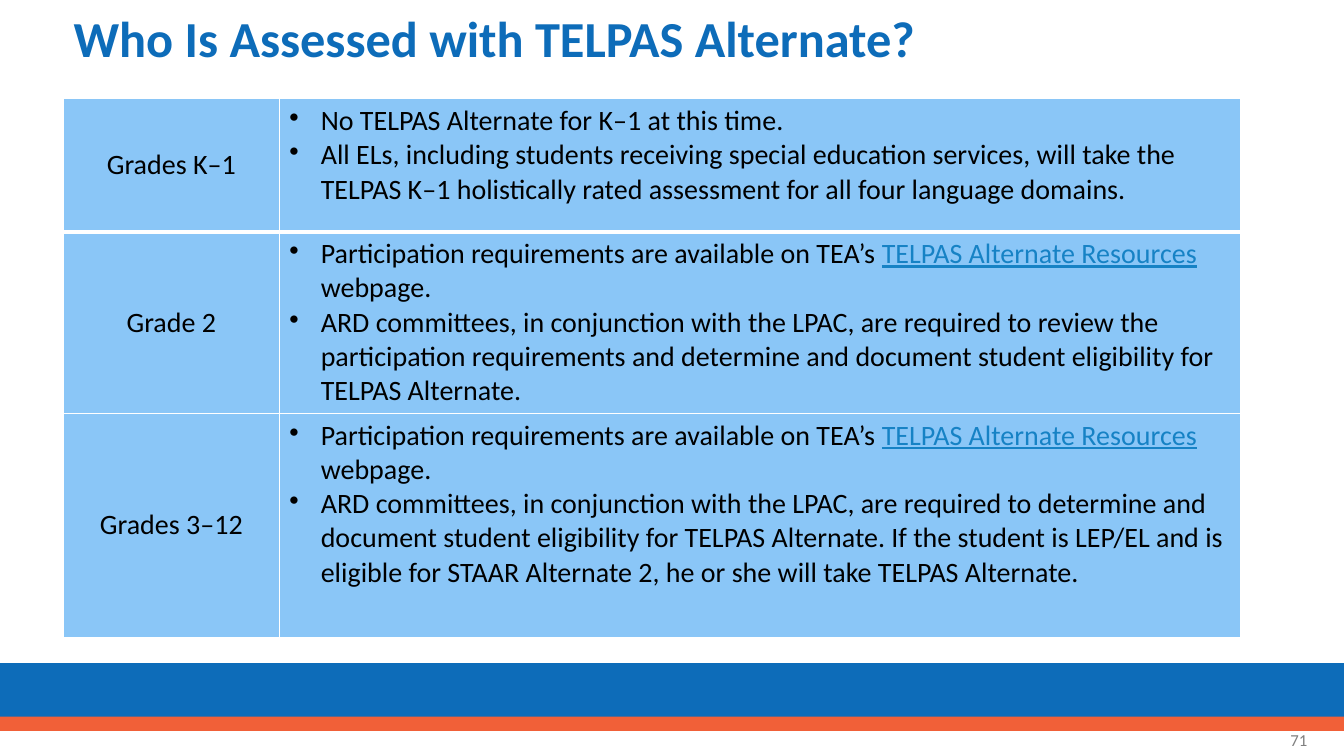
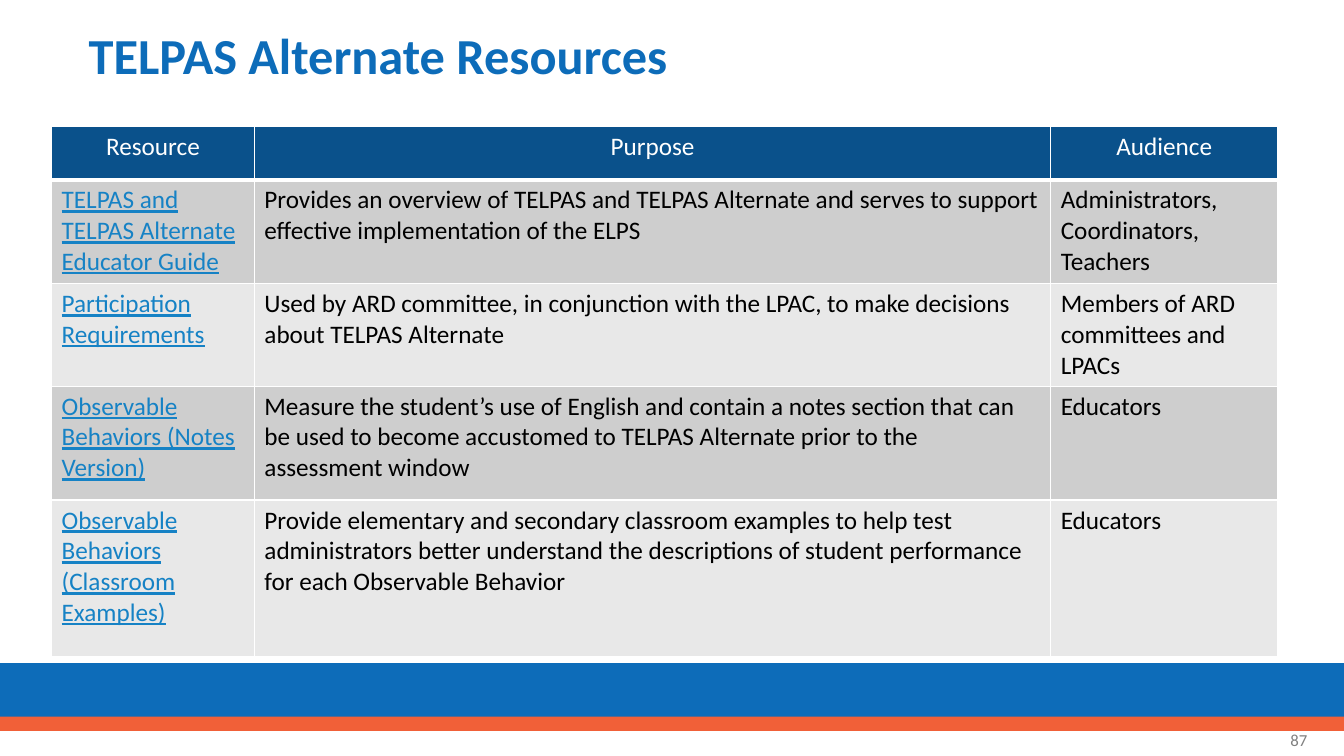
from dataclasses import dataclass

import pptx
import pptx.dml.color
import pptx.enum.shapes
import pptx.enum.text
import pptx.oxml.ns
import pptx.oxml.xmlchemy
import pptx.presentation
import pptx.slide
import pptx.table
import pptx.text.text
import pptx.util
from lxml import etree

Cm = pptx.util.Cm
PP_ALIGN = pptx.enum.text.PP_ALIGN
MSO_ANCHOR = pptx.enum.text.MSO_ANCHOR


# Theme and content types
@dataclass(frozen=True)
class Theme:
    font: str = "Calibri"
    blue: str = "0D6CB9"
    orange: str = "F16038"
    header: str = "0A518B"
    sky: str = "8AC6F7"
    dark_band: str = "CECECE"
    light_band: str = "E8E8E8"
    link: str = "1682C5"
    text: str = "000000"
    white: str = "FFFFFF"
    number: str = "808080"
    title_size: int = 36
    grades_size: int = 20
    resources_size: int = 18
    number_size: int = 12
    thin_line: int = 1
    thick_line: int = 3


THEME = Theme()


@dataclass(frozen=True)
class Band:
    top: float
    height: float
    color: str


@dataclass(frozen=True)
class Run:
    text: str
    link: bool = False


Paragraph = tuple[Run, ...]


@dataclass(frozen=True)
class CellStyle:
    size: int
    fill: str
    color: str = THEME.text
    alignment: PP_ALIGN = PP_ALIGN.LEFT
    anchor: MSO_ANCHOR = MSO_ANCHOR.TOP
    bulleted: bool = False
    bottom_line: int = THEME.thin_line


@dataclass(frozen=True)
class TableLayout:
    left: float
    top: float
    columns: tuple[float, ...]
    rows: tuple[float, ...]


@dataclass(frozen=True)
class Grade:
    name: str
    rules: tuple[Paragraph, ...]


@dataclass(frozen=True)
class Resource:
    name: str
    purpose: str
    audience: str


BANDS = (Band(16.71, 1.47, THEME.blue), Band(18.06, 0.36, THEME.orange))

WEBPAGE_RULE: Paragraph = (
    Run("Participation requirements are available on TEA’s "),
    Run("TELPAS Alternate Resources ", link=True),
    Run("webpage."),
)

GRADES = (
    Grade("Grades K–1", (
        (Run("No TELPAS Alternate for K–1 at this time."),),
        (Run("All ELs, including students receiving special education services, will take "
             "the TELPAS K–1 holistically rated assessment for all four language domains."),),
    )),
    Grade("Grade 2", (
        WEBPAGE_RULE,
        (Run("ARD committees, in conjunction with the LPAC, are required to review the "
             "participation requirements and determine and document student eligibility "
             "for TELPAS Alternate."),),
    )),
    Grade("Grades 3–12", (
        WEBPAGE_RULE,
        (Run("ARD committees, in conjunction with the LPAC, are required to determine and "
             "document student eligibility for TELPAS Alternate. If the student is LEP/EL "
             "and is eligible for STAAR Alternate 2, he or she will take TELPAS Alternate."),),
    )),
)

RESOURCES = (
    Resource("TELPAS and TELPAS Alternate Educator Guide",
             "Provides an overview of TELPAS and TELPAS Alternate and serves to support "
             "effective implementation of the ELPS",
             "Administrators, Coordinators, Teachers"),
    Resource("Participation Requirements",
             "Used by ARD committee, in conjunction with the LPAC, to make decisions "
             "about TELPAS Alternate",
             "Members of ARD committees and LPACs"),
    Resource("Observable Behaviors (Notes Version)",
             "Measure the student’s use of English and contain a notes section that can be "
             "used to become accustomed to TELPAS Alternate prior to the assessment window",
             "Educators"),
    Resource("Observable Behaviors (Classroom Examples)",
             "Provide elementary and secondary classroom examples to help test "
             "administrators better understand the descriptions of student performance "
             "for each Observable Behavior",
             "Educators"),
)


# Formatting helpers
def rgb(color: str) -> pptx.dml.color.RGBColor:
    return pptx.dml.color.RGBColor.from_string(color)


def format_font(paragraph: pptx.text.text._Paragraph, size: int, color: str,
                bold: bool = False) -> None:
    font = paragraph.font
    font.name, font.size, font.bold = THEME.font, pptx.util.Pt(size), bold
    font.color.rgb = rgb(color)


def add_bullet(paragraph: pptx.text.text._Paragraph) -> None:
    properties = paragraph._p.get_or_add_pPr()
    indent = Cm(0.79)
    properties.set("marL", str(indent))
    properties.set("indent", str(-indent))
    etree.SubElement(properties, pptx.oxml.ns.qn("a:buChar")).set("char", "•")


def add_borders(cell: pptx.table._Cell, bottom_line: int) -> None:
    properties = cell._tc.get_or_add_tcPr()
    widths = {"lnL": THEME.thin_line, "lnR": THEME.thin_line,
              "lnT": THEME.thin_line, "lnB": bottom_line}
    for position, (side, width) in enumerate(widths.items()):
        line = etree.Element(pptx.oxml.ns.qn(f"a:{side}"), w=str(pptx.util.Pt(width)))
        fill = etree.SubElement(line, pptx.oxml.ns.qn("a:solidFill"))
        etree.SubElement(fill, pptx.oxml.ns.qn("a:srgbClr"), val=THEME.white)
        properties.insert(position, line)


# Shared slide parts
def add_bands(slide: pptx.slide.Slide) -> None:
    """Draw the footer bands and move them to the layout the slides share."""
    layout_tree = slide.slide_layout.shapes.element
    for position, band in enumerate(BANDS, start=2):
        shape = slide.shapes.add_shape(pptx.enum.shapes.MSO_SHAPE.RECTANGLE, 0, Cm(band.top),
                                       Cm(33.87), Cm(band.height))
        shape.shadow.inherit = False
        shape.fill.solid()
        shape.fill.fore_color.rgb = rgb(band.color)
        shape.line.fill.background()
        layout_tree.insert(position, shape.element)


def add_title(slide: pptx.slide.Slide, text: str, left: float, top: float) -> None:
    title = slide.shapes.title
    title.left, title.top, title.width, title.height = Cm(left), Cm(top), Cm(30.89), Cm(2.08)
    frame = title.text_frame
    frame.text = text
    frame.word_wrap = True
    frame.auto_size = pptx.enum.text.MSO_AUTO_SIZE.NONE
    frame.vertical_anchor = MSO_ANCHOR.MIDDLE
    paragraph = frame.paragraphs[0]
    paragraph.alignment = PP_ALIGN.LEFT
    paragraph.line_spacing = 0.9
    format_font(paragraph, THEME.title_size, THEME.blue, bold=True)


def add_number(slide: pptx.slide.Slide, number: int) -> None:
    box = slide.shapes.add_textbox(Cm(25.58), Cm(18.14), Cm(7.62), Cm(1.02))
    frame = box.text_frame
    frame.word_wrap = True
    frame.vertical_anchor = MSO_ANCHOR.MIDDLE
    paragraph = frame.paragraphs[0]
    paragraph.text = str(number)
    paragraph.alignment = PP_ALIGN.RIGHT
    format_font(paragraph, THEME.number_size, THEME.number)


# Tables
def add_table(slide: pptx.slide.Slide, layout: TableLayout) -> pptx.table.Table:
    table = slide.shapes.add_table(
        len(layout.rows), len(layout.columns), Cm(layout.left), Cm(layout.top),
        Cm(sum(layout.columns)), Cm(sum(layout.rows))).table
    table.first_row = table.horz_banding = False
    for column, width in zip(table.columns, layout.columns):
        column.width = Cm(width)
    for row, height in zip(table.rows, layout.rows):
        row.height = Cm(height)
    return table


def fill_cell(cell: pptx.table._Cell, paragraphs: tuple[Paragraph, ...],
              style: CellStyle) -> None:
    cell.fill.solid()
    cell.fill.fore_color.rgb = rgb(style.fill)
    cell.vertical_anchor = style.anchor
    add_borders(cell, style.bottom_line)
    frame = cell.text_frame
    for index, runs in enumerate(paragraphs):
        paragraph = frame.add_paragraph() if index else frame.paragraphs[0]
        paragraph.alignment = style.alignment
        if style.bulleted:
            add_bullet(paragraph)
        format_font(paragraph, style.size, style.color)
        for part in runs:
            run = paragraph.add_run()
            run.text = part.text
            if part.link:
                run.font.underline = True
                run.font.color.rgb = rgb(THEME.link)


def add_grades_table(slide: pptx.slide.Slide) -> None:
    table = add_table(slide, TableLayout(1.6, 2.49, (5.44, 24.23), (3.35, 4.19, 5.64)))
    for row, grade in enumerate(GRADES):
        line = THEME.thin_line if row else THEME.thick_line
        name_style = CellStyle(THEME.grades_size, THEME.sky, alignment=PP_ALIGN.CENTER,
                               anchor=MSO_ANCHOR.MIDDLE, bottom_line=line)
        rules_style = CellStyle(THEME.grades_size, THEME.sky, bulleted=True, bottom_line=line)
        fill_cell(table.cell(row, 0), ((Run(grade.name),),), name_style)
        fill_cell(table.cell(row, 1), grade.rules, rules_style)


def add_resources_table(slide: pptx.slide.Slide) -> None:
    table = add_table(slide, TableLayout(1.3, 3.18, (5.11, 20.07, 5.72),
                                         (1.35, 2.62, 2.41, 2.87, 3.94)))
    header_style = CellStyle(THEME.resources_size, THEME.header, THEME.white,
                             PP_ALIGN.CENTER, bottom_line=THEME.thick_line)
    for column, heading in enumerate(("Resource", "Purpose", "Audience")):
        fill_cell(table.cell(0, column), ((Run(heading),),), header_style)
    for row, resource in enumerate(RESOURCES, start=1):
        style = CellStyle(THEME.resources_size,
                          THEME.dark_band if row % 2 else THEME.light_band)
        runs = (Run(resource.name, link=True), Run(resource.purpose), Run(resource.audience))
        for column, run in enumerate(runs):
            fill_cell(table.cell(row, column), ((run,),), style)


# Slides
def main() -> None:
    presentation = pptx.Presentation()
    presentation.slide_width, presentation.slide_height = Cm(33.87), Cm(19.05)
    title_only = presentation.slide_layouts[5]

    assessed = presentation.slides.add_slide(title_only)
    add_bands(assessed)
    add_title(assessed, "Who Is Assessed with TELPAS Alternate?", 1.6, 0)
    add_grades_table(assessed)
    add_number(assessed, 71)

    resources = presentation.slides.add_slide(title_only)
    add_title(resources, "TELPAS Alternate Resources", 1.98, 0.43)
    add_resources_table(resources)
    add_number(resources, 87)

    presentation.save("out.pptx")


if __name__ == "__main__":
    main()
